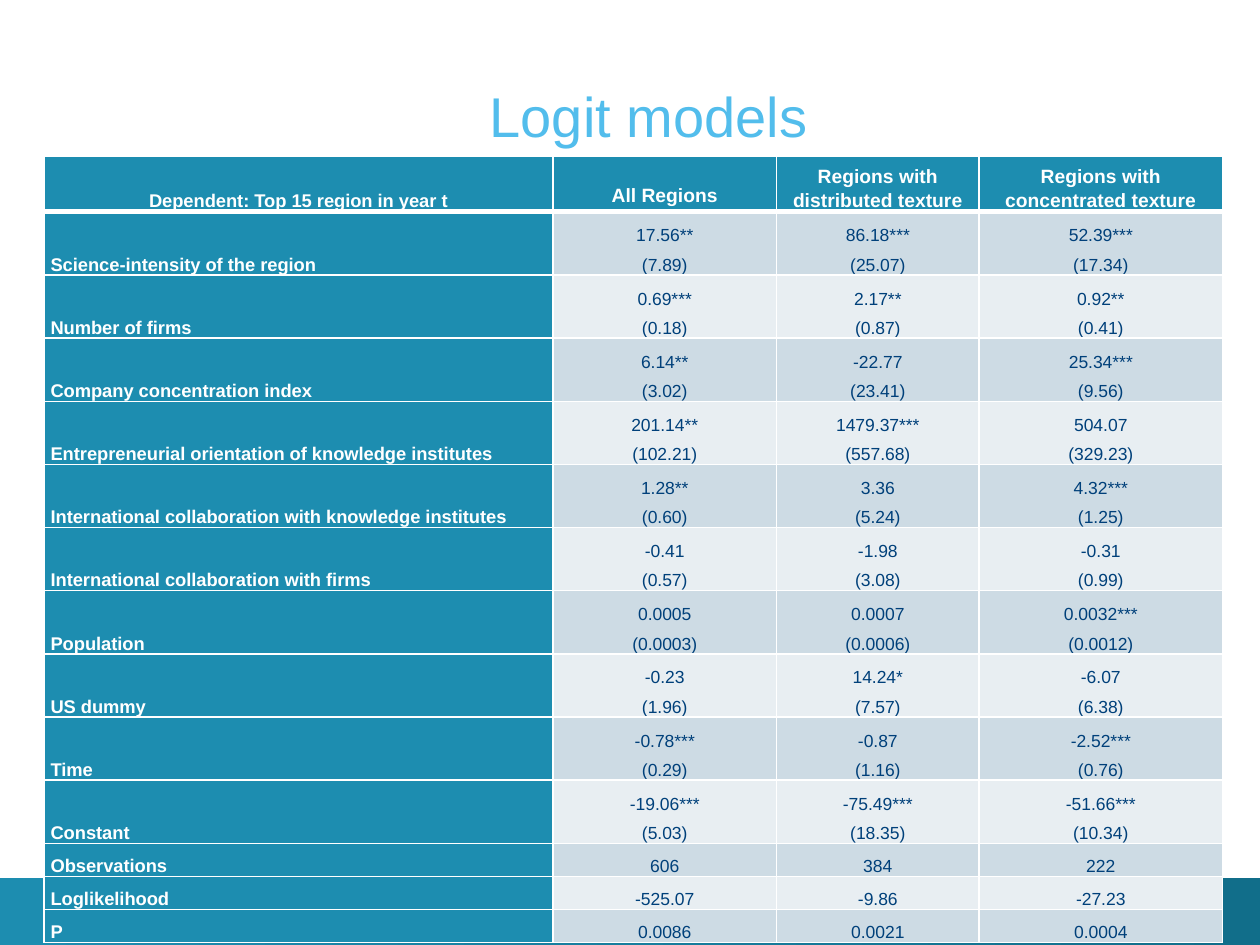
"""Build a slide with a table of logit model estimates."""
from lxml import etree
from pptx import Presentation
from pptx.dml.color import RGBColor
from pptx.enum.shapes import MSO_SHAPE
from pptx.enum.text import MSO_ANCHOR, PP_ALIGN
from pptx.oxml.ns import qn
from pptx.util import Cm, Pt

RECT = MSO_SHAPE.RECTANGLE
TOP, BOTTOM = MSO_ANCHOR.TOP, MSO_ANCHOR.BOTTOM
LEFT, CENTER = PP_ALIGN.LEFT, PP_ALIGN.CENTER
TEAL, DEEP, SKY, NAVY, WHITE = "1D8DB0", "116E8A", "52BDEC", "00407A", "FFFFFF"
BANDS = ["CDDBE4", "E8EEF2"]

HEADS = [
    "Dependent: Top 15 region in year t",
    "All Regions",
    "Regions with\ndistributed texture",
    "Regions with\nconcentrated texture",
]
ROWS = [
    ["Science-intensity of the region", "17.56**\n(7.89)", "86.18***\n(25.07)", "52.39***\n(17.34)"],
    ["Number of firms", "0.69***\n(0.18)", "2.17**\n(0.87)", "0.92**\n(0.41)"],
    ["Company concentration index", "6.14**\n(3.02)", "-22.77\n(23.41)", "25.34***\n(9.56)"],
    ["Entrepreneurial orientation of knowledge institutes",
     "201.14**\n(102.21)", "1479.37***\n(557.68)", "504.07\n(329.23)"],
    ["International collaboration with knowledge institutes",
     "1.28**\n(0.60)", "3.36\n(5.24)", "4.32***\n(1.25)"],
    ["International collaboration with firms", "-0.41\n(0.57)", "-1.98\n(3.08)", "-0.31\n(0.99)"],
    ["Population", "0.0005\n(0.0003)", "0.0007\n(0.0006)", "0.0032***\n(0.0012)"],
    ["US dummy", "-0.23\n(1.96)", "14.24*\n(7.57)", "-6.07\n(6.38)"],
    ["Time", "-0.78***\n(0.29)", "-0.87\n(1.16)", "-2.52***\n(0.76)"],
    ["Constant", "-19.06***\n(5.03)", "-75.49***\n(18.35)", "-51.66***\n(10.34)"],
    ["Observations", "606", "384", "222"],
    ["Loglikelihood", "-525.07", "-9.86", "-27.23"],
    ["P", "0.0086", "0.0021", "0.0004"],
]


def paint(color, code):
    """Give a colour format its hex value."""
    color.rgb = RGBColor.from_string(code)


def style(frame, size, code, bold, align, space):
    """Format every paragraph and run of a text frame."""
    for para in frame.paragraphs:
        para.alignment = align
        para.line_spacing = space
        for run in para.runs:
            run.font.name = "Arial"
            run.font.size = Pt(size)
            run.font.bold = bold
            paint(run.font.color, code)


deck = Presentation()
deck.slide_width, deck.slide_height = Cm(25.4), Cm(19.05)
slide = deck.slides.add_slide(deck.slide_layouts[6])

foot = slide.shapes.add_shape(RECT, Cm(0), Cm(17.7), Cm(25.4), Cm(1.35))
foot.shadow.inherit = False
foot.line.fill.background()
foot.fill.gradient()
foot.fill.gradient_angle = 0
for stop, code in zip(foot.fill.gradient_stops, [TEAL, DEEP]):
    paint(stop.color, code)

title = slide.shapes.add_textbox(Cm(1.5), Cm(0.5), Cm(23.15), Cm(2.5))
frame = title.text_frame
frame.word_wrap = True
frame.vertical_anchor = BOTTOM
frame.margin_left = frame.margin_right = frame.margin_top = frame.margin_bottom = 0
frame.text = "Logit models"
style(frame, 32, SKY, False, CENTER, 1.0)

data = [HEADS] + ROWS
tall = [1.12] + [1.22 if "\n" in row[1] else 0.61 for row in ROWS]
wide = [10.26, 4.5, 4.09, 4.9]
table = slide.shapes.add_table(
    len(data), len(wide), Cm(0.89), Cm(3.15), Cm(sum(wide)), Cm(sum(tall))
).table
for col, width in zip(table.columns, wide):
    col.width = Cm(width)
for row, height in zip(table.rows, tall):
    row.height = Cm(height)

for r, texts in enumerate(data):
    for c, text in enumerate(texts):
        cell = table.cell(r, c)
        cell.margin_left = cell.margin_right = Cm(0.13)
        cell.margin_top = cell.margin_bottom = 0
        cell.vertical_anchor = BOTTOM
        cell.text_frame.text = text
        head, side = r == 0, c == 0
        label = head or side
        size = 10.5 if side else 11 if head else 10
        style(cell.text_frame, size, WHITE if label else NAVY, label,
              LEFT if side and not head else CENTER, 1.15 if head else 1.5)
        props = cell._tc.get_or_add_tcPr()
        thick = {"lnT": r == 1, "lnB": head}
        for tag in ["lnL", "lnR", "lnT", "lnB"]:
            width = Pt(3 if thick.get(tag) else 1)
            edge = etree.SubElement(props, qn("a:" + tag), w=str(width))
            fill = etree.SubElement(edge, qn("a:solidFill"))
            etree.SubElement(fill, qn("a:srgbClr"), val=WHITE)
        cell.fill.solid()
        paint(cell.fill.fore_color, TEAL if label else BANDS[(r - 1) % 2])

table.cell(0, 1).vertical_anchor = TOP
table.cell(0, 1).margin_top = Cm(0.51)

deck.save("out.pptx")
